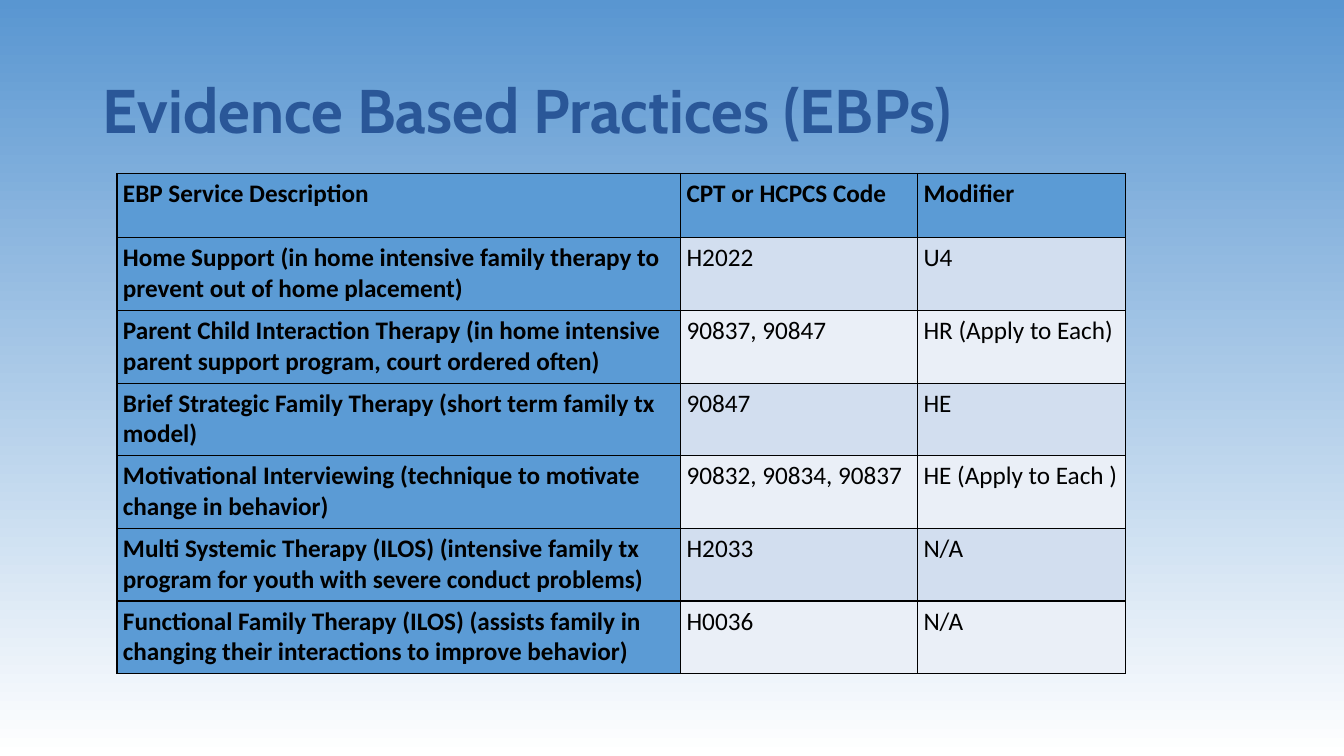
from dataclasses import dataclass

from lxml.etree import SubElement
from pptx import Presentation
from pptx.dml.color import RGBColor as Rgb
from pptx.enum.text import MSO_ANCHOR as Anchor, MSO_AUTO_SIZE as Fit, PP_ALIGN as Align
from pptx.oxml.ns import qn
from pptx.util import Pt

PX = 9144


@dataclass(frozen=True)
class Theme:
    """Colours, fonts and sizes of the slide."""
    sky: str = "5996D1"
    white: str = "FFFFFF"
    navy: str = "2A5798"
    ink: str = "000000"
    head: str = "5B9BD5"
    bands: tuple = ("D2DEEF", "EAEFF7")
    title_font: str = "Cabin"
    body_font: str = "Calibri"
    title_size: int = 44
    body_size: int = 18
    rule: int = 1


THEME = Theme()
COLS = (559, 235, 206)
ROW = 64
INSET = 6
TOP = 5
ROWS = (
    ("EBP Service Description", "CPT or HCPCS Code", "Modifier"),
    ("Home Support (in home intensive family therapy to prevent out of home placement)",
     "H2022", "U4"),
    ("Parent Child Interaction Therapy (in home intensive parent support program, "
     "court ordered often)", "90837, 90847", "HR (Apply to Each)"),
    ("Brief Strategic Family Therapy (short term family tx model)", "90847", "HE"),
    ("Motivational Interviewing (technique to motivate change in behavior)",
     "90832, 90834, 90837", "HE (Apply to Each )"),
    ("Multi Systemic Therapy (ILOS) (intensive family tx program for youth with "
     "severe conduct problems)", "H2033", "N/A"),
    ("Functional Family Therapy (ILOS) (assists family in changing their interactions "
     "to improve behavior)", "H0036", "N/A"),
)


def px(*vals):
    """Turn px lengths into EMU."""
    return [val * PX for val in vals]


def style(para, font, size, color, bold):
    """Format the runs of a paragraph."""
    for run in para.runs:
        run.font.name = font
        run.font.size = Pt(size)
        run.font.bold = bold
        run.font.color.rgb = Rgb.from_string(color)


def paint_back(slide):
    """Fill the background from blue at the top to white."""
    fill = slide.background.fill
    fill.gradient()
    fill.gradient_angle = 270
    for stop, color, pos in zip(fill.gradient_stops, (THEME.sky, THEME.white), (0, 1)):
        stop.color.rgb = Rgb.from_string(color)
        stop.position = pos


def set_title(slide, text, *box):
    """Place and format the title."""
    title = slide.shapes.title
    title.left, title.top, title.width, title.height = px(*box)
    frame = title.text_frame
    frame.text = text
    frame.auto_size = Fit.NONE
    frame.vertical_anchor = Anchor.MIDDLE
    para = frame.paragraphs[0]
    para.alignment = Align.LEFT
    para.line_spacing = 0.9
    style(para, THEME.title_font, THEME.title_size, THEME.navy, True)


def add_rules(cell):
    """Draw the four borders of a cell ahead of its fill."""
    props = cell._tc.get_or_add_tcPr()
    for at, side in enumerate(("lnL", "lnR", "lnT", "lnB")):
        line = SubElement(props, qn(f"a:{side}"), w=str(Pt(THEME.rule)))
        fill = SubElement(line, qn("a:solidFill"))
        SubElement(fill, qn("a:srgbClr"), val=THEME.ink)
        props.insert(at, line)


def set_cell(cell, text, color, bold):
    """Write, fill and outline one cell."""
    cell.text = text
    cell.margin_left = cell.margin_right = cell.margin_bottom = INSET * PX
    cell.margin_top = TOP * PX
    cell.fill.solid()
    cell.fill.fore_color.rgb = Rgb.from_string(color)
    add_rules(cell)
    style(cell.text_frame.paragraphs[0], THEME.body_font, THEME.body_size, THEME.ink, bold)


def add_grid(slide, rows, left, top):
    """Add the table with a dark first row and column."""
    box = px(left, top, sum(COLS), ROW * len(rows))
    table = slide.shapes.add_table(len(rows), len(COLS), *box).table
    table.first_row = table.horz_banding = False
    for col, width in zip(table.columns, px(*COLS)):
        col.width = width
    for r, row in enumerate(rows):
        table.rows[r].height = ROW * PX
        for c, text in enumerate(row):
            head = r == 0 or c == 0
            color = THEME.head if head else THEME.bands[(r - 1) % 2]
            set_cell(table.cell(r, c), text, color, head)


def main():
    """Build and save the slide."""
    deck = Presentation()
    deck.slide_width, deck.slide_height = px(1333, 750)
    slide = deck.slides.add_slide(deck.slide_layouts[5])
    paint_back(slide)
    set_title(slide, "Evidence Based Practices (EBPs)", 92, 40, 1150, 145)
    add_grid(slide, ROWS, 116, 172)
    deck.save("out.pptx")


if __name__ == "__main__":
    main()
